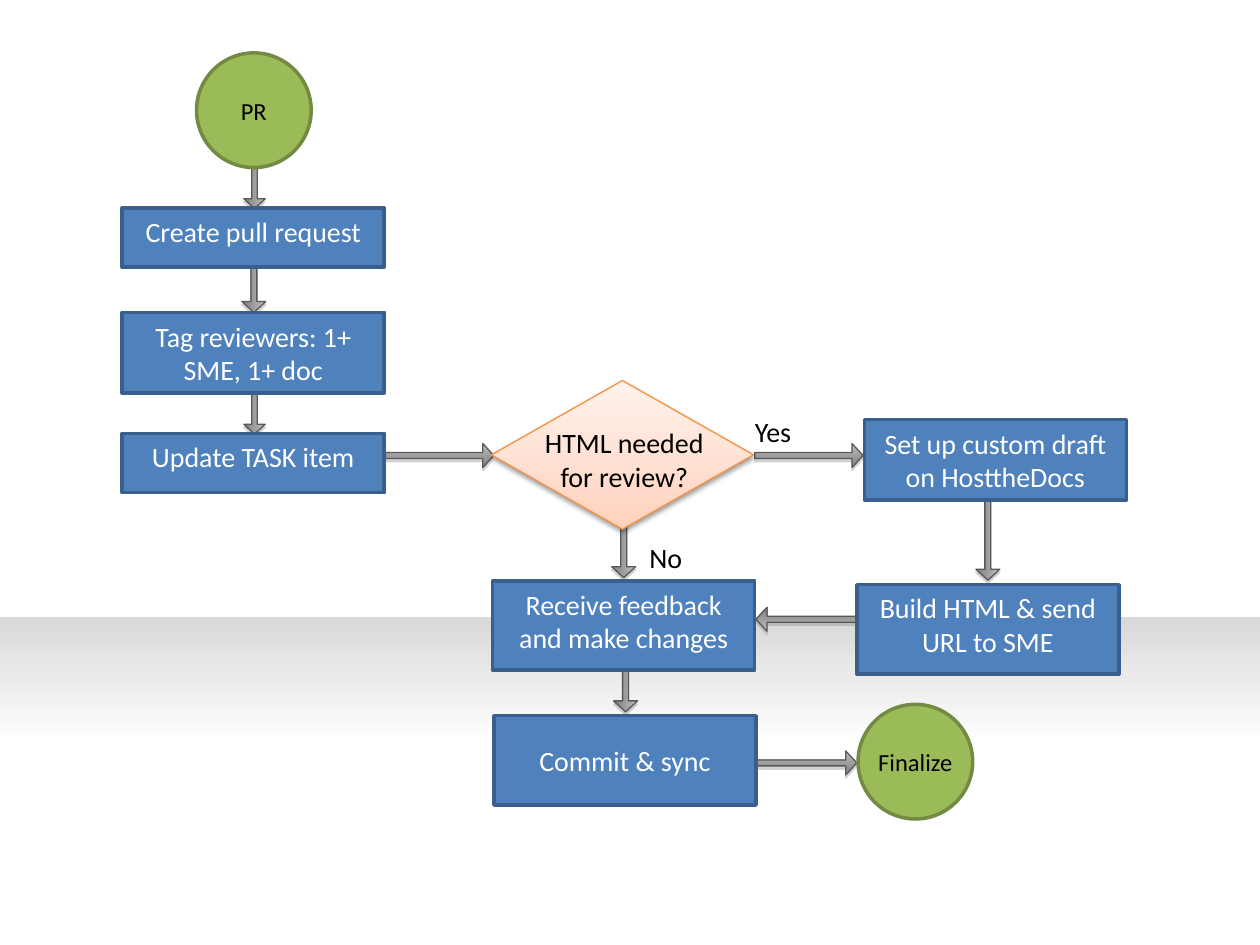
from dataclasses import dataclass
from lxml import etree
from pptx import Presentation
from pptx.dml.color import RGBColor
from pptx.enum.shapes import MSO_SHAPE
from pptx.enum.text import MSO_ANCHOR, PP_ALIGN
from pptx.oxml.ns import qn
from pptx.util import Inches, Pt

RECT, OVAL = MSO_SHAPE.RECTANGLE, MSO_SHAPE.OVAL
ARROW, DIAMOND = MSO_SHAPE.RIGHT_ARROW, MSO_SHAPE.DIAMOND
TOP, MIDDLE = MSO_ANCHOR.TOP, MSO_ANCHOR.MIDDLE
CENTER = PP_ALIGN.CENTER
DOWN, UP = 270, 90  # gradient directions


@dataclass
class Theme:
    font: str = "Calibri"
    body: int = 16
    small: int = 14
    dark: str = "000000"
    light: str = "FFFFFF"
    step: str = "4F81BD"
    step_edge: str = "3A5F8C"
    end: str = "9BBB59"
    end_edge: str = "738A42"
    arrow: tuple = ("BFBFBF", "7F7F7F")
    arrow_edge: str = "595959"
    choice: tuple = ("FFD2BD", "FFF2ED")
    choice_edge: str = "F69240"
    floor: tuple = ("D9D9D9", "FFFFFF")


theme = Theme()
deck = Presentation()
deck.slide_width, deck.slide_height = Inches(10), Inches(7.5)
slide = deck.slides.add_slide(deck.slide_layouts[6])


def draw(kind, box, fill, edge=None, width=2, angle=DOWN, shadow=None):
    """Add a shape; a pair of fill colours makes a gradient, shadow is (colour, alpha, blur, distance)."""
    shape = slide.shapes.add_shape(kind, *map(Inches, box))
    shape.shadow.inherit = False
    if isinstance(fill, tuple):
        shape.fill.gradient()
        shape.fill.gradient_angle = angle
        for stop, color in zip(shape.fill.gradient_stops, fill):
            stop.color.rgb = RGBColor.from_string(color)
    else:
        shape.fill.solid()
        shape.fill.fore_color.rgb = RGBColor.from_string(fill)
    if edge:
        shape.line.color.rgb = RGBColor.from_string(edge)
        shape.line.width = Pt(width)
    else:
        shape.line.fill.background()
    if shadow:
        color, alpha, blur, dist = shadow
        effects = shape._element.spPr.find(qn("a:effectLst"))
        outer = etree.SubElement(effects, qn("a:outerShdw"), blurRad=str(Pt(blur)),
                                 dist=str(Pt(dist)), dir="5400000", rotWithShape="0")
        tint = etree.SubElement(outer, qn("a:srgbClr"), val=color)
        etree.SubElement(tint, qn("a:alpha"), val=str(alpha * 1000))
    return shape


def write(shape, text, color, size=theme.body, anchor=TOP, wrap=True):
    frame = shape.text_frame
    frame.word_wrap = wrap
    frame.vertical_anchor = anchor
    para = frame.paragraphs[0]
    para.text = text
    para.alignment = CENTER
    para.font.name = theme.font
    para.font.size = Pt(size)
    para.font.color.rgb = RGBColor.from_string(color)


# Shaded floor behind the flow
floor = draw(RECT, (0, 4.9, 10, 2.6), theme.floor)
floor.fill.gradient_stops[1].position = 0.39

# Arrows: left, top, length, thickness, rotation
arrows = [
    (1.81, 1.36, 0.42, 0.17, 90),
    (1.81, 2.18, 0.41, 0.19, 90),
    (1.81, 3.15, 0.42, 0.17, 90),
    (3.06, 3.52, 0.86, 0.19, 0),
    (5.99, 3.52, 0.86, 0.19, 0),
    (4.61, 4.15, 0.68, 0.19, 90),
    (7.5, 4.17, 0.68, 0.19, 90),
    (6, 4.82, 0.86, 0.19, 180),
    (4.76, 5.35, 0.41, 0.19, 90),
    (5.94, 5.96, 0.86, 0.19, 0),
]
for *box, turn in arrows:
    arrow = draw(ARROW, box, theme.arrow, theme.arrow_edge, 0.75,
                 shadow=("808080", 35, 0, 1.8))
    arrow.adjustments[0], arrow.adjustments[1] = 0.25, 0.458
    arrow.rotation = turn

# Decision
draw(DIAMOND, (3.9, 3.02, 2.08, 1.18), theme.choice, theme.choice_edge, 0.75,
     UP, ("000000", 38, 3.1, 1.6))

# Steps: left, top, height, anchor, text
steps = [
    (0.97, 1.65, 0.47, TOP, "Create pull request"),
    (0.97, 2.48, 0.64, MIDDLE, "Tag reviewers: 1+ SME, 1+ doc"),
    (0.97, 3.44, 0.47, TOP, "Update TASK item"),
    (6.86, 3.33, 0.64, MIDDLE, "Set up custom draft on HosttheDocs"),
    (6.8, 4.64, 0.71, TOP, "Build HTML & send URL to SME"),
    (3.91, 4.61, 0.71, TOP, "Receive feedback and make changes"),
    (3.92, 5.68, 0.71, MIDDLE, "Commit & sync"),
]
for left, top, high, anchor, text in steps:
    step = draw(RECT, (left, top, 2.08, high), theme.step, theme.step_edge)
    write(step, text, theme.light, anchor=anchor)

# Start and end
for left, top, text in [(1.56, 0.42, "PR"), (6.81, 5.59, "Finalize")]:
    end = draw(OVAL, (left, top, 0.91, 0.91), theme.end, theme.end_edge)
    write(end, text, theme.dark, theme.small, MIDDLE, wrap=False)

# Question and answers
labels = [
    (4.17, 3.33, 1.57, 0.64, "HTML needed for review?"),
    (5.87, 3.24, 0.53, 0.37, "Yes"),
    (4.97, 4.24, 0.63, 0.37, "No"),
]
for *box, text in labels:
    write(slide.shapes.add_textbox(*map(Inches, box)), text, theme.dark)

deck.save("out.pptx")
